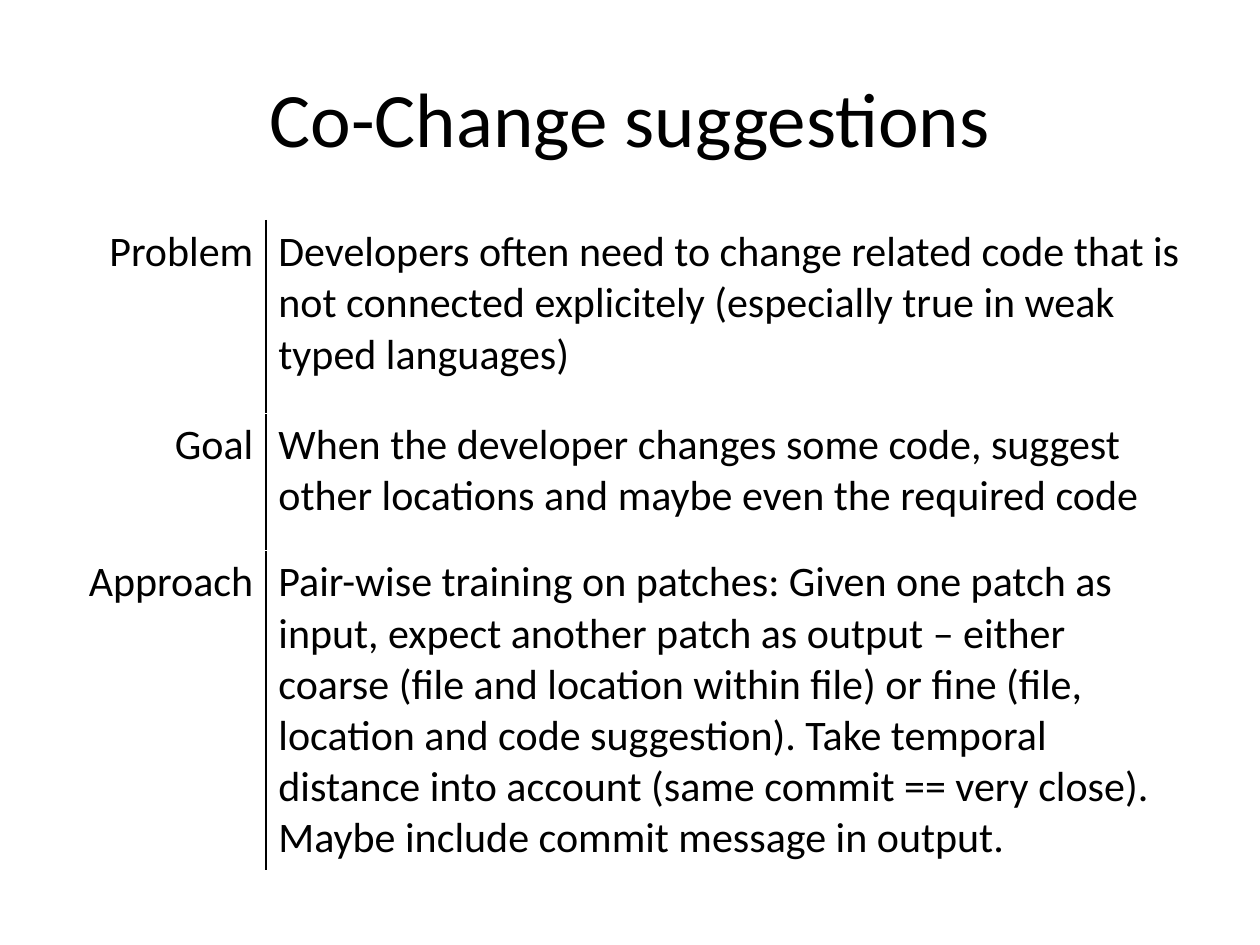
from lxml import etree
from pptx import Presentation
from pptx.dml.color import RGBColor
from pptx.enum.text import MSO_ANCHOR, PP_ALIGN
from pptx.oxml.ns import qn
from pptx.util import Inches, Pt

LEFT, CENTER, RIGHT = PP_ALIGN.LEFT, PP_ALIGN.CENTER, PP_ALIGN.RIGHT
TOP, MIDDLE = MSO_ANCHOR.TOP, MSO_ANCHOR.MIDDLE
TITLE_ONLY = 5

ROWS = [
    ("Problem",
     "Developers often need to change related code that is not connected "
     "explicitely (especially true in weak typed languages)"),
    ("Goal",
     "When the developer changes some code, suggest other locations and "
     "maybe even the required code"),
    ("Approach",
     "Pair-wise training on patches: Given one patch as input, expect another "
     "patch as output – either coarse (file and location within file) or fine "
     "(file, location and code suggestion). Take temporal distance into account "
     "(same commit == very close). Maybe include commit message in output."),
]


def color(value):
    return RGBColor.from_string(value)


def write(frame, text, size, align=LEFT, font="Calibri", ink="000000"):
    frame.word_wrap = True
    paragraph = frame.paragraphs[0]
    paragraph.text = text
    paragraph.alignment = align
    paragraph.font.name = font
    paragraph.font.size = Pt(size)
    paragraph.font.color.rgb = color(ink)


def add_border(cell, side, ink="000000", width=1):
    """Draw one cell edge; side is 'L', 'R', 'T' or 'B'."""
    line = etree.Element(qn(f"a:ln{side}"), w=str(Pt(width)))
    fill = etree.SubElement(line, qn("a:solidFill"))
    etree.SubElement(fill, qn("a:srgbClr"), val=ink)
    cell._tc.get_or_add_tcPr().insert(0, line)


class SlideBuilder:
    """Holds the style and the slide; lengths are shares of the slide's size."""
    title_size = 44
    text_size = 24
    margin = 0.05

    def __init__(self, presentation):
        self.width = presentation.slide_width
        self.height = presentation.slide_height
        self.slide = presentation.slides.add_slide(
            presentation.slide_layouts[TITLE_ONLY])

    def box(self, top, height):
        """Left, top, width and height of a band between the side margins."""
        shares = (self.margin, top, 1 - 2 * self.margin, height)
        sizes = (self.width, self.height) * 2
        return [round(share * size) for share, size in zip(shares, sizes)]

    def title(self, text, top, height):
        shape = self.slide.shapes.title
        shape.left, shape.top, shape.width, shape.height = self.box(top, height)
        shape.text_frame.vertical_anchor = MIDDLE
        write(shape.text_frame, text, self.title_size, CENTER)

    def definition_table(self, rows, top, row_shares, label_share):
        """Right-aligned labels, a vertical rule, then their descriptions."""
        left, top, width, height = self.box(top, sum(row_shares))
        table = self.slide.shapes.add_table(
            len(rows), 2, left, top, width, height).table
        table.first_row = table.horz_banding = False
        table.columns[0].width = round(width * label_share)
        table.columns[1].width = width - table.columns[0].width
        for row, share, texts in zip(table.rows, row_shares, rows):
            row.height = round(self.height * share)
            for cell, text, align, side in zip(
                    row.cells, texts, (RIGHT, LEFT), "RL"):
                cell.fill.background()
                cell.vertical_anchor = TOP
                write(cell.text_frame, text, self.text_size, align)
                add_border(cell, side)


def main():
    presentation = Presentation()
    presentation.slide_width = Inches(10)
    presentation.slide_height = Inches(7.5)
    builder = SlideBuilder(presentation)
    builder.title("Co-Change suggestions", top=0.04, height=1 / 6)
    builder.definition_table(
        ROWS, top=1.75 / 7.5,
        row_shares=[inches / 7.5 for inches in (1.53, 1.09, 2.51)],
        label_share=1.61 / 9)
    presentation.save("out.pptx")


if __name__ == "__main__":
    main()
